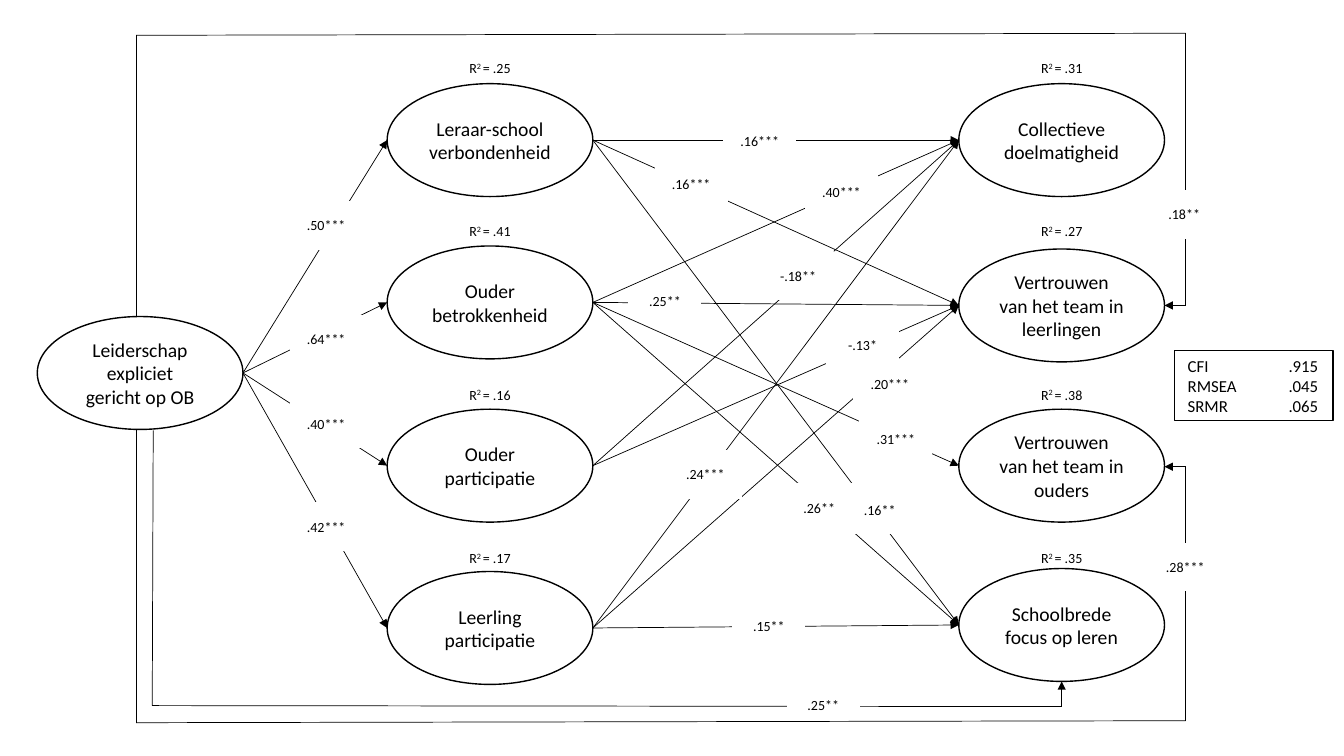
from dataclasses import dataclass

import pptx
import pptx.dml.color
import pptx.enum.shapes
import pptx.enum.text
import pptx.oxml.ns
import pptx.util
from lxml import etree

Inches, Pt = pptx.util.Inches, pptx.util.Pt
RGB = pptx.dml.color.RGBColor
SHAPES = pptx.enum.shapes.MSO_SHAPE
ALIGN = pptx.enum.text.PP_ALIGN
qn = pptx.oxml.ns.qn


@dataclass(frozen=True)
class Theme:
    font: str = "Calibri"
    ink: RGB = RGB(0, 0, 0)
    paper: RGB = RGB(255, 255, 255)
    construct_size: int = 14
    fit_size: int = 12
    label_size: int = 10
    outline: float = 1
    path_line: float = 0.5


THEME = Theme()
ELLIPSE_W, ELLIPSE_H = 2.04, 1.12
LABEL_W, LABEL_H = 0.71, 0.47
ELLIPSE_LEFT, ELLIPSE_RIGHT = 2, 6  # connection sites of an ellipse

LEADERSHIP = "Leiderschap expliciet gericht op OB"
# key: (top, text, explained variance)
MEDIATORS = {
    "leraar": (0.83, "Leraar-school verbondenheid", ".25"),
    "betrokkenheid": (2.44, "Ouder\nbetrokkenheid", ".41"),
    "participatie": (4.06, "Ouder\nparticipatie", ".16"),
    "leerling": (5.67, "Leerling\nparticipatie", ".17"),
}
OUTCOMES = {
    "collectief": (0.83, "Collectieve doelmatigheid", ".31"),
    "leerlingen": (2.47, "Vertrouwen van het team in leerlingen", ".27"),
    "ouders": (4.06, "Vertrouwen van het team in ouders", ".38"),
    "focus": (5.64, "Schoolbrede focus op leren", ".35"),
}

# Each layer covers the one before it: paths, bent routes, then labels (left, top, text)
LAYERS = [
    (
        [("leiderschap", mediator) for mediator in MEDIATORS]
        + [("leraar", "collectief"), ("leraar", "leerlingen"),
           ("betrokkenheid", "leerlingen"), ("betrokkenheid", "focus"),
           ("participatie", "leerlingen"), ("leerling", "collectief"),
           ("leerling", "leerlingen"), ("leerling", "focus")],
        [[(1.35, 3.14), (1.35, 0.35), (11.76, 0.33), (11.76, 3.03), (11.55, 3.03)],
         [(1.52, 4.27), (1.51, 7), (10.53, 7.01), (10.53, 6.76)]],
        [(11.39, 1.89, ".18**"), (7.18, 1.16, ".16***"), (6.5, 1.59, ".16***"),
         (6.24, 2.75, ".25**"), (8.2, 3.19, "-.13*"), (7.81, 6.76, ".25**")],
    ),
    (
        [("betrokkenheid", "collectief"), ("betrokkenheid", "ouders"), ("leraar", "focus")],
        [[(1.35, 4.27), (1.35, 7.17), (11.76, 7.15), (11.76, 4.63), (11.55, 4.63)]],
        [(7.99, 1.67, ".40***"), (8.37, 4.82, ".16**"), (7.77, 4.8, ".26**"),
         (7.27, 5.97, ".15**"), (11.4, 5.39, ".28***"), (8.47, 3.57, ".20***"),
         (6.64, 4.47, ".24***"), (8.53, 4.12, ".31***"), (2.88, 2, ".50***"),
         (2.88, 3.13, ".64***"), (2.88, 3.97, ".40***"), (2.88, 4.99, ".42***")],
    ),
    ([("participatie", "collectief")], [], [(7.56, 2.5, "-.18**")]),
]


def write(shape, text, *, size, inset=0.1, align=ALIGN.CENTER, tab=None):
    """Fill the shape with lines; pieces between ^ marks are superscript."""
    frame = shape.text_frame
    frame.word_wrap = True
    frame.vertical_anchor = pptx.enum.text.MSO_ANCHOR.MIDDLE
    frame.margin_left = frame.margin_right = Inches(inset)
    for index, line in enumerate(text.split("\n")):
        paragraph = frame.add_paragraph() if index else frame.paragraphs[0]
        paragraph.alignment = align
        if tab:
            stops = etree.SubElement(paragraph._p.get_or_add_pPr(), qn("a:tabLst"))
            etree.SubElement(stops, qn("a:tab"), pos=str(Inches(tab)), algn="l")
        for piece_index, piece in enumerate(line.split("^")):
            run = paragraph.add_run()
            run.text = piece
            run.font.name = THEME.font
            run.font.size = Pt(size)
            run.font.color.rgb = THEME.ink
            if piece_index % 2:
                run.font._element.set("baseline", "30000")


def add_panel(slide, preset, box, text, *, line=THEME.ink, **text_format):
    panel = slide.shapes.add_shape(preset, *map(Inches, box))
    panel.shadow.inherit = False
    panel.fill.solid()
    panel.fill.fore_color.rgb = THEME.paper
    panel.line.color.rgb = line
    panel.line.width = Pt(THEME.outline)
    write(panel, text, **text_format)
    return panel


def add_label(slide, left, top, text):
    add_panel(slide, SHAPES.RECTANGLE, (left, top, LABEL_W, LABEL_H), text,
              size=THEME.label_size, line=THEME.paper, inset=0)


def add_construct(slide, left, top, text):
    return add_panel(slide, SHAPES.OVAL, (left, top, ELLIPSE_W, ELLIPSE_H), text,
                     size=THEME.construct_size)


def add_column(slide, left, constructs):
    """Draw a column of constructs, each under its explained variance."""
    for row, (_, _, variance) in enumerate(constructs.values()):
        add_label(slide, left + (ELLIPSE_W - LABEL_W) / 2, 0.44 + 1.62 * row,
                  f"R^2 ^= {variance}")
    return {key: add_construct(slide, left, top, text)
            for key, (top, text, _) in constructs.items()}


def add_line(slide, start, end, arrow=False):
    """Draw a thin line between two points given in EMU."""
    line = slide.shapes.add_connector(
        pptx.enum.shapes.MSO_CONNECTOR.STRAIGHT, *start, *end)
    line.line.color.rgb = THEME.ink
    line.line.width = Pt(THEME.path_line)
    if arrow:
        etree.SubElement(line.line._get_or_add_ln(), qn("a:tailEnd"), type="triangle")
    etree.SubElement(line._element.spPr, qn("a:effectLst"))
    return line


def add_path(slide, source, target):
    """Join the right of one ellipse to the left of another."""
    start = (source.left + source.width, source.top + source.height // 2)
    end = (target.left, target.top + target.height // 2)
    path = add_line(slide, start, end, arrow=True)
    joints = path._element.find(".//" + qn("p:cNvCxnSpPr"))
    for tag, construct, site in (("a:stCxn", source, ELLIPSE_RIGHT),
                                 ("a:endCxn", target, ELLIPSE_LEFT)):
        etree.SubElement(joints, qn(tag), id=str(construct.shape_id), idx=str(site))


def add_route(slide, corners):
    """Draw a bent route whose last leg ends in an arrowhead."""
    points = [tuple(map(Inches, corner)) for corner in corners]
    for leg, (start, end) in enumerate(zip(points, points[1:]), 2):
        add_line(slide, start, end, arrow=leg == len(points))


def add_fit_box(slide, box):
    add_panel(slide, SHAPES.RECTANGLE, box, "CFI\t.915\nRMSEA\t.045\nSRMR\t.065",
              size=THEME.fit_size, inset=0.13, align=ALIGN.LEFT, tab=1)


def add_path_model(slide):
    constructs = {
        **add_column(slide, 3.84, MEDIATORS),
        **add_column(slide, 9.51, OUTCOMES),
        "leiderschap": add_construct(slide, 0.37, 3.14, LEADERSHIP),
    }
    for paths, routes, labels in LAYERS:
        for source, target in paths:
            add_path(slide, constructs[source], constructs[target])
        for corners in routes:
            add_route(slide, corners)
        for label in labels:
            add_label(slide, *label)


def main():
    deck = pptx.Presentation()
    deck.slide_width, deck.slide_height = Inches(13.33), Inches(7.5)
    slide = deck.slides.add_slide(deck.slide_layouts[6])
    add_path_model(slide)
    add_fit_box(slide, (11.65, 3.48, 1.57, 0.69))
    deck.save("out.pptx")


if __name__ == "__main__":
    main()
